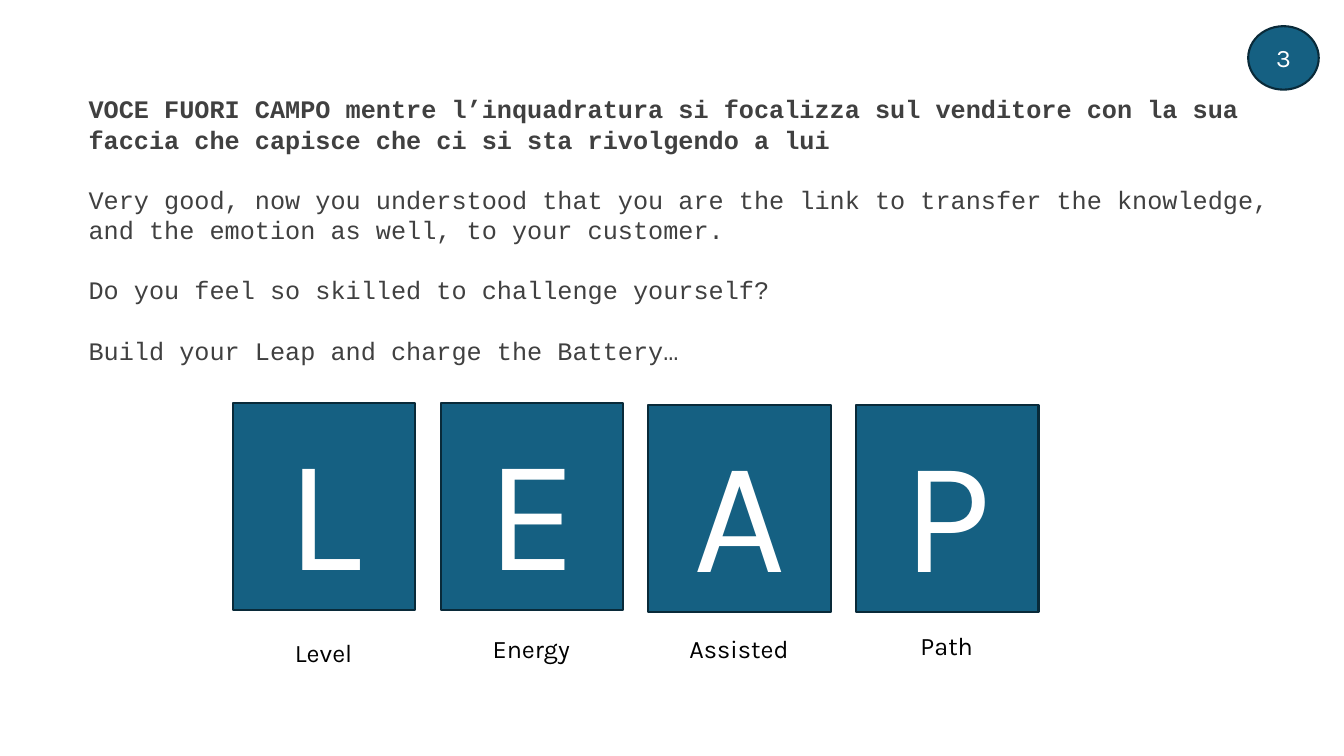
from pptx import Presentation
from pptx.dml.color import RGBColor
from pptx.enum.shapes import MSO_SHAPE as Shape
from pptx.enum.text import MSO_ANCHOR as Anchor, PP_ALIGN as Align
from pptx.util import Inches, Pt

TEAL = RGBColor(0x15, 0x60, 0x82)
NAVY = RGBColor(0x09, 0x2A, 0x39)
GREY = RGBColor(0x40, 0x40, 0x40)
WHITE = RGBColor(0xFF, 0xFF, 0xFF)
BLACK = RGBColor(0x00, 0x00, 0x00)

SCRIPT_LINES = [
    "VOCE FUORI CAMPO mentre l’inquadratura si focalizza sul venditore "
    "con la sua faccia che capisce che ci si sta rivolgendo a lui",
    "Very good, now you understood that you are the link to transfer "
    "the knowledge, and the emotion as well, to your customer.",
    "Do you feel so skilled to challenge yourself?",
    "Build your Leap and charge the Battery…",
]
LEAP = [("Level", 4, 6.27), ("Energy", 4, 6.23), ("Assisted", 4.02, 6.23), ("Path", 4.02, 6.2)]
TILE_LEFT, TILE_STEP = 2.31, 2.06
LABEL_INSET = 0.15


class SlideBuilder:
    body_font = "Courier New"
    label_font = "Karla"
    text_size = 18

    def __init__(self, slide):
        self.shapes = slide.shapes

    def style(self, paragraph, font, size, color, bold=False):
        paragraph.font.name = font
        paragraph.font.size = Pt(size)
        paragraph.font.color.rgb = color
        paragraph.font.bold = bold

    def box(self, left, top, width, height):
        frame = self.shapes.add_textbox(
            Inches(left), Inches(top), Inches(width), Inches(height)).text_frame
        frame.word_wrap = True
        return frame

    def passage(self, lines, left, top, width, height, gap):
        frame = self.box(left, top, width, height)
        for index, line in enumerate(lines):
            paragraph = frame.paragraphs[0] if index == 0 else frame.add_paragraph()
            paragraph.text = line
            paragraph.space_before = Pt(gap if index else 0)
            self.style(paragraph, self.body_font, self.text_size, GREY, bold=index == 0)

    def label(self, text, left, top, width=1.5, height=0.4):
        paragraph = self.box(left, top, width, height).paragraphs[0]
        paragraph.text = text
        paragraph.alignment = Align.CENTER
        self.style(paragraph, self.label_font, self.text_size, BLACK)

    def badge(self, kind, text, left, top, width, height, size):
        badge = self.shapes.add_shape(
            kind, Inches(left), Inches(top), Inches(width), Inches(height))
        badge.shadow.inherit = False
        badge.fill.solid()
        badge.fill.fore_color.rgb = TEAL
        badge.line.color.rgb = NAVY
        badge.line.width = Pt(1.5)
        badge.text_frame.vertical_anchor = Anchor.MIDDLE
        paragraph = badge.text_frame.paragraphs[0]
        paragraph.text = text
        paragraph.alignment = Align.CENTER
        self.style(paragraph, self.label_font, size, WHITE)


def main():
    presentation = Presentation()
    presentation.slide_width = Inches(13.33)
    presentation.slide_height = Inches(7.5)
    builder = SlideBuilder(presentation.slides.add_slide(presentation.slide_layouts[6]))

    builder.passage(SCRIPT_LINES, 0.78, 0.88, 12.14, 2.83, gap=21.5)
    builder.badge(Shape.OVAL, "3", 12.38, 0.26, 0.7, 0.63, size=18)
    for index, (word, tile_top, label_top) in enumerate(LEAP):
        left = TILE_LEFT + index * TILE_STEP
        builder.badge(Shape.RECTANGLE, word[0], left, tile_top, 1.81, 2.05, size=115)
        builder.label(word, left + LABEL_INSET, label_top)
    presentation.save("out.pptx")


if __name__ == "__main__":
    main()
